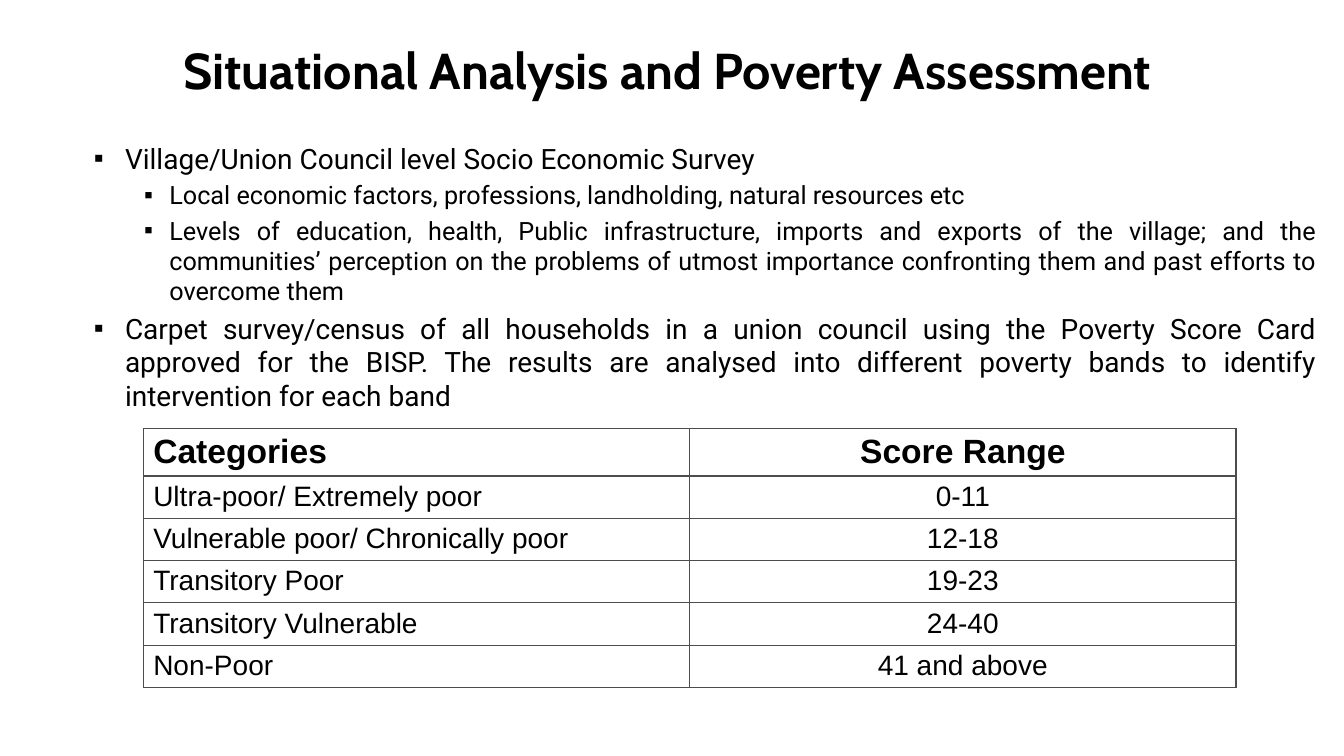
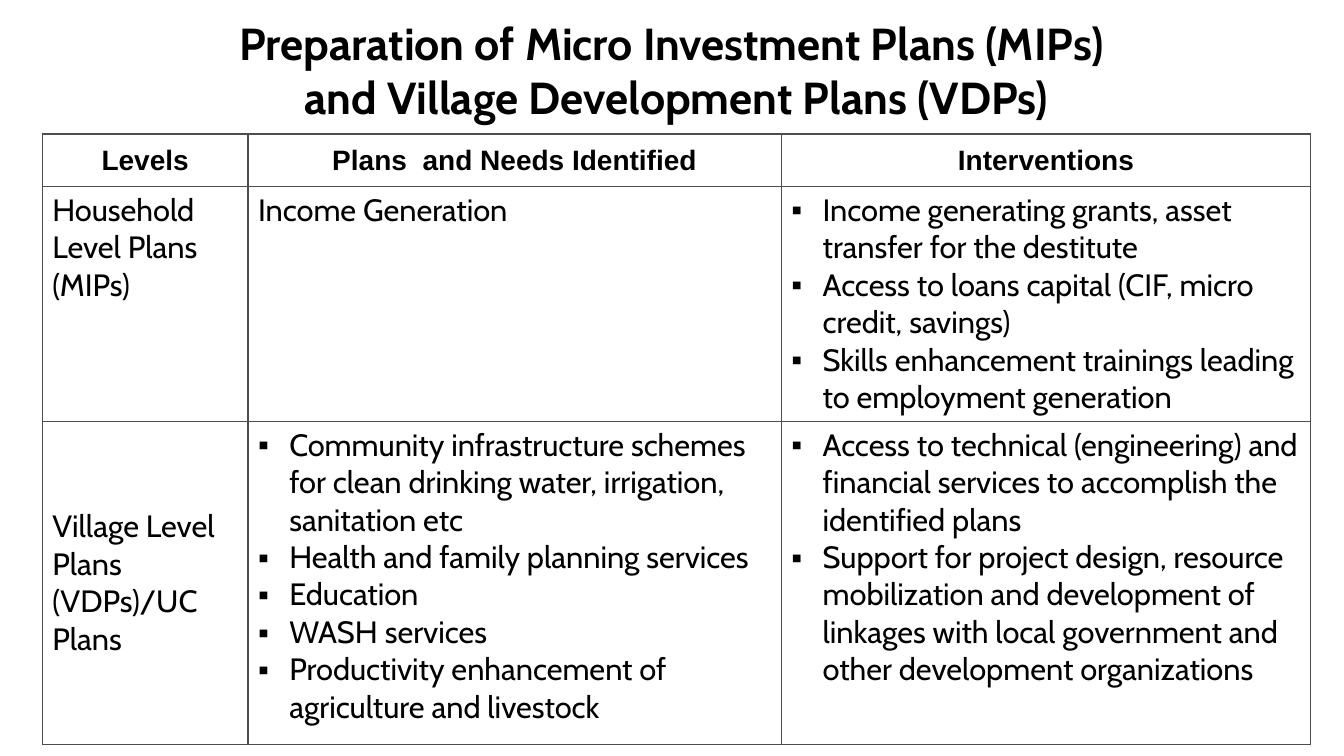
from lxml import etree
from pptx import Presentation
from pptx import util as u
from pptx.dml.color import RGBColor
from pptx.enum import text
from pptx.oxml import ns

BLACK, WHITE, GRID = "000000", "FFFFFF", "4D4D4D"
HEADING_FONT, BODY_FONT, TABLE_FONT = "Cabin", "Roboto", "Arial"
LEFT, CENTER, JUSTIFY = text.PP_ALIGN.LEFT, text.PP_ALIGN.CENTER, text.PP_ALIGN.JUSTIFY
TOP, MIDDLE = text.MSO_ANCHOR.TOP, text.MSO_ANCHOR.MIDDLE

SURVEY_POINTS = [
    (1, "Village/Union Council level Socio Economic Survey"),
    (2, "Local economic factors, professions, landholding, natural resources etc"),
    (2, "Levels of education, health, Public infrastructure, imports and exports of the village; "
        "and the communities’ perception on the problems of utmost importance confronting them "
        "and past efforts to overcome them"),
    (1, "Carpet survey/census of all households in a union council using the Poverty Score Card "
        "approved for the BISP. The results are analysed into different poverty bands to identify "
        "intervention for each band"),
]
POINT_STYLES = {1: (20, 0.81, 0.31), 2: (18, 1.25, 0.25)}

SCORES = [
    ("Categories", "Score Range"),
    ("Ultra-poor/ Extremely poor", "0-11"),
    ("Vulnerable poor/ Chronically poor", "12-18"),
    ("Transitory Poor", "19-23"),
    ("Transitory Vulnerable", "24-40"),
    ("Non-Poor", "41 and above"),
]

PLANS = [
    ("Levels", "Plans  and Needs Identified", "Interventions"),
    ("Household Level Plans (MIPs)",
     "Income Generation",
     ["Income generating grants, asset transfer for the destitute",
      "Access to loans capital (CIF, micro credit, savings)",
      "Skills enhancement trainings leading to employment generation"]),
    ("Village Level Plans (VDPs)/UC Plans",
     ["Community infrastructure schemes for clean drinking water, irrigation, sanitation etc",
      "Health and family planning services",
      "Education",
      "WASH services",
      "Productivity enhancement of agriculture and livestock"],
     ["Access to technical (engineering) and financial services to accomplish the identified plans",
      "Support for project design, resource mobilization and development of linkages with local "
      "government and other development organizations"]),
]


def color(value):
    return RGBColor.from_string(value)


def place(shape, left, top, width, height):
    shape.left, shape.top = u.Inches(left), u.Inches(top)
    shape.width, shape.height = u.Inches(width), u.Inches(height)


def style(para, font, size, align, bold=False):
    para.alignment = align
    para.font.name = font
    para.font.size = u.Pt(size)
    para.font.bold = bold
    para.font.color.rgb = color(BLACK)


def add_bullet(para, indent, hanging):
    props = para._p.get_or_add_pPr()
    props.set("marL", str(u.Inches(indent)))
    props.set("indent", str(-u.Inches(hanging)))
    etree.SubElement(props, ns.qn("a:buFont"), typeface=TABLE_FONT)
    etree.SubElement(props, ns.qn("a:buChar"), char="▪")


def write_paragraphs(frame, lines):
    frame.text = "\n".join(lines)
    return frame.paragraphs


def add_slide(deck, layout, title, size, left):
    page = deck.slides.add_slide(deck.slide_layouts[layout])
    box = page.shapes.title
    place(box, left, 0.3, 12.58, 0.78)
    frame = box.text_frame
    frame.auto_size = text.MSO_AUTO_SIZE.NONE
    frame.vertical_anchor = MIDDLE
    frame.text = title
    style(frame.paragraphs[0], HEADING_FONT, size, CENTER, bold=True)
    return page


def fill_body(page, points):
    box = page.placeholders[1]
    place(box, 0.33, 1.35, 12.83, 6.06)
    frame = box.text_frame
    frame.auto_size = text.MSO_AUTO_SIZE.NONE
    paras = write_paragraphs(frame, [line for _, line in points])
    for number, (para, (level, _)) in enumerate(zip(paras, points)):
        size, indent, hanging = POINT_STYLES[level]
        para.level = level
        para.space_before = u.Pt(size * 0.2 if number else 0)
        add_bullet(para, indent, hanging)
        style(para, BODY_FONT, size, JUSTIFY)


def add_borders(cell):
    props = cell._tc.get_or_add_tcPr()
    for side in ("lnL", "lnR", "lnT", "lnB"):
        line = etree.SubElement(props, ns.qn(f"a:{side}"), w=str(u.Pt(1)))
        fill = etree.SubElement(line, ns.qn("a:solidFill"))
        etree.SubElement(fill, ns.qn("a:srgbClr"), val=GRID)


def fill_cell(cell, content, font, size, align, anchor=TOP, bold=False):
    bulleted = isinstance(content, list)
    add_borders(cell)
    cell.fill.solid()
    cell.fill.fore_color.rgb = color(WHITE)
    cell.vertical_anchor = anchor
    for para in write_paragraphs(cell.text_frame, content if bulleted else [content]):
        if bulleted:
            add_bullet(para, 0.31, 0.31)
        style(para, font, size, align, bold)


def add_grid(page, left, top, widths, heights):
    frame = page.shapes.add_table(
        len(heights), len(widths), u.Inches(left), u.Inches(top),
        u.Inches(sum(widths)), u.Inches(sum(heights)))
    table = frame.table
    table.first_row = table.horz_banding = False
    for column, width in zip(table.columns, widths):
        column.width = u.Inches(width)
    for row, height in zip(table.rows, heights):
        row.height = u.Inches(height)
    return table


def add_assessment(deck):
    page = add_slide(deck, 1, "Situational Analysis and Poverty Assessment", 36, 0.33)
    fill_body(page, SURVEY_POINTS)
    table = add_grid(page, 1.42, 4.25, [5.42] * 2, [0.47] + [0.42] * 5)
    for r, row in enumerate(SCORES):
        for c, content in enumerate(row):
            fill_cell(table.cell(r, c), content, TABLE_FONT, 20 if r else 24,
                      CENTER if c else LEFT, bold=r == 0)


def add_plans(deck):
    title = "Preparation of Micro Investment Plans (MIPs) \vand Village Development Plans (VDPs)"
    page = add_slide(deck, 5, title, 32, 0.42)
    table = add_grid(page, 0.42, 1.33, [2.04, 5.29, 5.25], [0.52, 2.32, 3.21])
    for r, row in enumerate(PLANS):
        for c, content in enumerate(row):
            cell = table.cell(r, c)
            if r == 0:
                fill_cell(cell, content, TABLE_FONT, 20, CENTER, MIDDLE, bold=True)
            else:
                anchor = MIDDLE if (r, c) == (2, 0) else TOP
                fill_cell(cell, content, HEADING_FONT, 22, LEFT, anchor)


def main():
    deck = Presentation()
    deck.slide_width, deck.slide_height = u.Inches(13.33), u.Inches(7.5)
    add_assessment(deck)
    add_plans(deck)
    deck.save("out.pptx")


if __name__ == "__main__":
    main()
